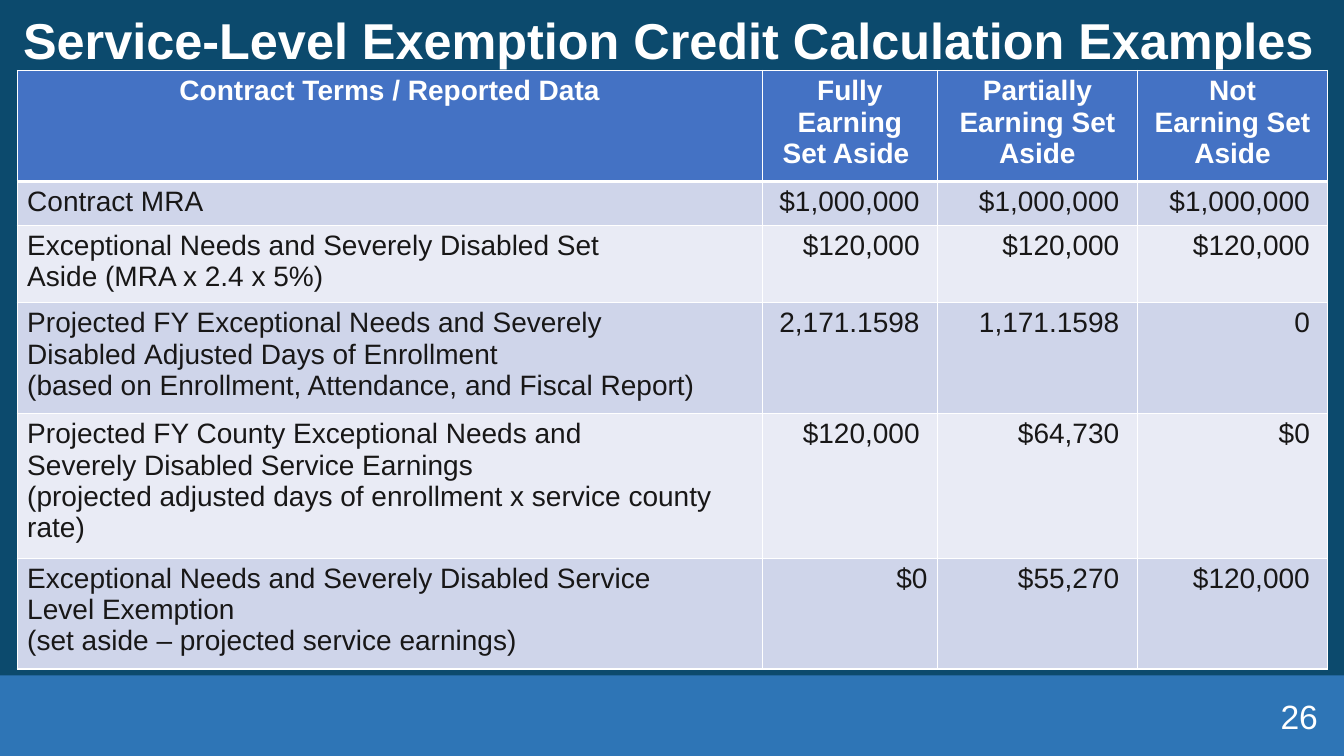
import pptx
import pptx.util
import pptx.dml.color
import pptx.enum.shapes
import pptx.enum.text
from lxml import etree
from pptx.oxml.ns import qn

Inches, Pt = pptx.util.Inches, pptx.util.Pt
RGBColor = pptx.dml.color.RGBColor
ALIGN = pptx.enum.text.PP_ALIGN

TITLE = "Service-Level Exemption Credit Calculation Examples"
PAGE_NUMBER = "26"
# "~" ties words together as a non-breaking space; a line feed starts a paragraph.
ROWS = [
    ("Contract Terms / Reported Data", "Fully Earning\nSet Aside~",
     "Partially Earning~Set Aside", "Not Earning~Set Aside"),
    ("Contract MRA~", "$1,000,000~", "$1,000,000~", "$1,000,000~"),
    ("Exceptional Needs and Severely Disabled Set Aside~(MRA x 2.4 x 5%)",
     "$120,000~", "$120,000~", "$120,000~"),
    ("Projected FY Exceptional Needs and Severely Disabled~Adjusted Days of Enrollment~\n"
     "(based on Enrollment, Attendance, and Fiscal Report)",
     "2,171.1598~", "1,171.1598~", "0~"),
    ("Projected FY County Exceptional Needs and Severely~Disabled Service Earnings~\n"
     "(projected adjusted days of enrollment x service county rate)",
     "$120,000~", "$64,730~", "$0~"),
    ("Exceptional Needs and Severely Disabled Service Level~Exemption~\n"
     "(set aside – projected service earnings)",
     "$0", "$55,270~", "$120,000~"),
]
LINES_PER_ROW = [3, 1, 2, 3, 4, 3]
COLUMN_WIDTHS = [7.39, 1.74, 1.98, 1.89]
LINE_HEIGHT, ROW_PADDING = 0.31, 0.1

FONT = "Arial"
WHITE = RGBColor(0xFF, 0xFF, 0xFF)
INK = RGBColor(0x18, 0x17, 0x17)
NAVY = RGBColor(0x0C, 0x4A, 0x6D)
FOOTER_BLUE = RGBColor(0x2E, 0x75, 0xB6)
HEADER_BLUE = RGBColor(0x44, 0x72, 0xC4)
BANDS = [RGBColor(0xE9, 0xEB, 0xF5), RGBColor(0xCF, 0xD5, 0xEA)]


def write(frame, text, size, color, align, bold=False):
    frame.word_wrap = True
    frame.text = text.replace("~", chr(160))
    for para in frame.paragraphs:
        para.alignment = align
        for span in para.runs:
            span.font.name = FONT
            span.font.size = Pt(size)
            span.font.bold = bold
            span.font.color.rgb = color


def add_label(page, left, top, width, height, text, size, align, bold=False):
    box = page.shapes.add_textbox(Inches(left), Inches(top), Inches(width), Inches(height))
    write(box.text_frame, text, size, WHITE, align, bold)
    box.text_frame.vertical_anchor = pptx.enum.text.MSO_ANCHOR.MIDDLE
    return box


def add_borders(cell, top, bottom):
    """Draw white cell edges; top and bottom are widths in points."""
    properties = cell._tc.get_or_add_tcPr()
    for side, width in (("L", 1), ("R", 1), ("T", top), ("B", bottom)):
        line = etree.SubElement(properties, qn("a:ln" + side), w=str(Pt(width)))
        fill = etree.SubElement(line, qn("a:solidFill"))
        etree.SubElement(fill, qn("a:srgbClr"), val=str(WHITE))


def add_credit_table(page):
    heights = [ROW_PADDING + LINE_HEIGHT * lines for lines in LINES_PER_ROW]
    table = page.shapes.add_table(
        len(ROWS), len(COLUMN_WIDTHS), Inches(0.17), Inches(0.7),
        Inches(sum(COLUMN_WIDTHS)), Inches(sum(heights))).table
    for column, width in zip(table.columns, COLUMN_WIDTHS):
        column.width = Inches(width)
    for r, (texts, height) in enumerate(zip(ROWS, heights)):
        table.rows[r].height = Inches(height)
        header = r == 0
        for c, text in enumerate(texts):
            cell = table.cell(r, c)
            align = ALIGN.CENTER if header else ALIGN.RIGHT if c else ALIGN.LEFT
            write(cell.text_frame, text, 20, WHITE if header else INK, align, header)
            add_borders(cell, 3 if r == 1 else 1, 3 if header else 1)
            cell.fill.solid()
            cell.fill.fore_color.rgb = HEADER_BLUE if header else BANDS[r % 2]


def main():
    deck = pptx.Presentation()
    deck.slide_width, deck.slide_height = Inches(13.33), Inches(7.5)
    page = deck.slides.add_slide(deck.slide_layouts[6])
    page.background.fill.solid()
    page.background.fill.fore_color.rgb = NAVY

    footer = page.shapes.add_shape(
        pptx.enum.shapes.MSO_SHAPE.RECTANGLE,
        0, Inches(6.7), deck.slide_width, Inches(0.8))
    footer.shadow.inherit = False
    footer.fill.solid()
    footer.fill.fore_color.rgb = FOOTER_BLUE
    footer.line.fill.background()

    title = add_label(page, -0.35, -0.3, 13.97, 1.45, TITLE, 36, ALIGN.CENTER, True)
    title.text_frame.paragraphs[0].line_spacing = 0.9
    add_credit_table(page)
    add_label(page, 10.17, 6.9, 3, 0.4, PAGE_NUMBER, 24, ALIGN.RIGHT)
    deck.save("out.pptx")


if __name__ == "__main__":
    main()
